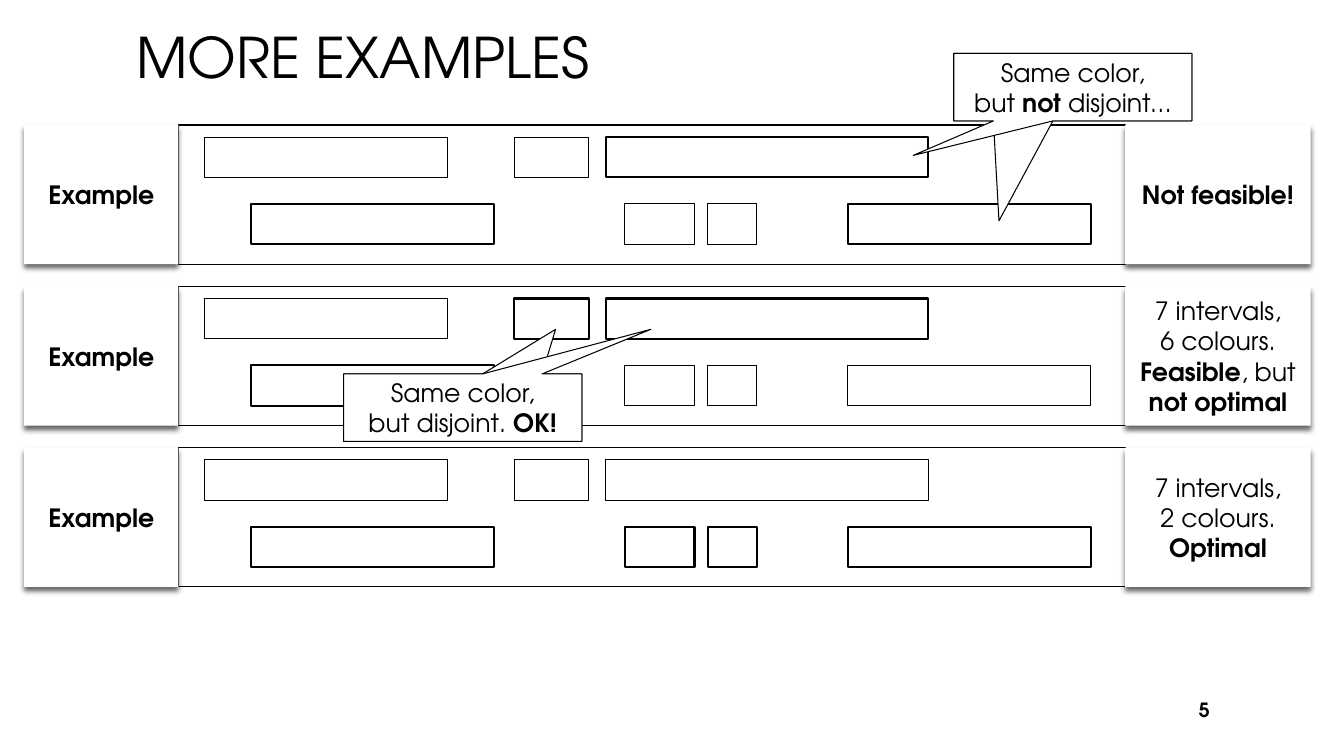
from lxml import etree
from pptx import Presentation
from pptx import util as u
from pptx.dml.color import RGBColor
from pptx.enum import shapes, text
from pptx.oxml import ns

COLS, ROWS = 80, 45
SHAPE, ALIGN = shapes.MSO_SHAPE, text.PP_ALIGN


def rgb(value):
    """Turn a hex string into a colour."""
    return RGBColor.from_string(value)


class Deck:
    """Hold the style and the current slide, measured in grid cells."""

    font, ink, paper, thin, thick = "TeX Gyre Adventor", "000000", "FFFFFF", 0.75, 1.5

    def __init__(self):
        """Open a deck with one title-only slide."""
        self.prs = Presentation()
        self.prs.slide_width, self.prs.slide_height = u.Inches(13.33), u.Inches(7.5)
        self.slide = self.prs.slides.add_slide(self.prs.slide_layouts[5])

    def box(self, x, y, w, h):
        """Convert columns and rows to slide lengths."""
        cw, rh = self.prs.slide_width / COLS, self.prs.slide_height / ROWS
        return [round(v) for v in (x * cw, y * rh, w * cw, h * rh)]

    def put_text(self, sp, paragraphs, size=18, align=ALIGN.CENTER):
        """Fill a shape with text, where ** toggles bold."""
        tf = sp.text_frame
        tf.word_wrap, tf.vertical_anchor = True, text.MSO_ANCHOR.MIDDLE
        for i, content in enumerate(paragraphs):
            p = tf.add_paragraph() if i else tf.paragraphs[0]
            p.alignment = align
            p.font.name, p.font.size = self.font, u.Pt(size)
            p.font.color.rgb = rgb(self.ink)
            for j, part in enumerate(content.split("**")):
                for k, line in enumerate(part.split("\n")):
                    if k:
                        p.add_line_break()
                    if line:
                        r = p.add_run()
                        r.text = line
                        r.font.bold = j % 2 == 1

    def title(self, content, *cells):
        """Place the slide title."""
        sp = self.slide.shapes.title
        sp.left, sp.top, sp.width, sp.height = self.box(*cells)
        self.put_text(sp, [content], 40, ALIGN.LEFT)

    def shape(self, kind, cells, line=None):
        """Add a filled shape, outlined if a width is given."""
        sp = self.slide.shapes.add_shape(kind, *self.box(*cells))
        sp.shadow.inherit = False
        sp.fill.solid()
        sp.fill.fore_color.rgb = rgb(self.paper)
        if line:
            sp.line.width = u.Pt(line)
            sp.line.color.rgb = rgb(self.ink)
        else:
            sp.line.fill.background()
        return sp

    def card(self, cells, paragraphs):
        """Add a text card with a soft shadow beneath it."""
        sp = self.shape(SHAPE.RECTANGLE, cells)
        effects = sp._element.spPr.find(ns.qn("a:effectLst"))
        shadow = etree.SubElement(effects, ns.qn("a:outerShdw"), blurRad=str(u.Pt(4)),
                                  dist=str(u.Pt(3)), dir="5400000", rotWithShape="0")
        color = etree.SubElement(shadow, ns.qn("a:srgbClr"), val=self.ink)
        etree.SubElement(color, ns.qn("a:alpha"), val="60000")
        self.put_text(sp, paragraphs)

    def callout(self, cells, tips, content):
        """Add one box with several tails, its text on the front one."""
        for tip in tips:
            sp = self.shape(SHAPE.RECTANGULAR_CALLOUT, cells, self.thin)
            sp.adjustments[0], sp.adjustments[1] = tip
        self.put_text(sp, [content])

    def label(self, content, size, *cells):
        """Add a right-aligned text box."""
        sp = self.slide.shapes.add_textbox(*self.box(*cells))
        self.put_text(sp, [content], size, ALIGN.RIGHT)


UPPER, LOWER, BAR_H = 0.72, 4.7, 2.4
INTERVALS = {
    "A": (12.18, UPPER, 14.46),
    "B": (14.94, LOWER, 14.46),
    "C": (30.6, UPPER, 4.44),
    "D": (36.06, UPPER, 19.2),
    "E": (37.2, LOWER, 4.14),
    "F": (42.12, LOWER, 2.94),
    "G": (50.46, LOWER, 14.46),
}
EXAMPLES = [
    ("ACEF", ["**Not feasible!**"]),
    ("AEFG", ["7 intervals,\n6 colours.", "**Feasible**, but\n**not optimal**"]),
    ("ACD", ["7 intervals,\n2 colours.", "**Optimal**"]),
]
TOP, PITCH, BAND_H = 7.44, 9.61, 8.28


def main():
    """Build the slide and save it."""
    deck = Deck()
    deck.title("MORE EXAMPLES", 7.5, 0, 65, 6.72)
    for i, (light, verdict) in enumerate(EXAMPLES):
        y = TOP + i * PITCH
        deck.shape(SHAPE.RECTANGLE, (10.62, y, 56.4, BAND_H), deck.thin)
        for name, (x, dy, w) in INTERVALS.items():
            deck.shape(SHAPE.FLOWCHART_PROCESS, (x, y + dy, w, BAR_H),
                       deck.thin if name in light else deck.thick)
        deck.card((1.44, y, 9.18, BAND_H), ["**Example**"])
        deck.card((66.98, y, 11.04, BAND_H), verdict)
    deck.callout((56.77, 3.18, 14.17, 4.02), [(-0.31, 1.98), (-0.67, 1.01)],
                 "Same color,\nbut **not **disjoint…")
    deck.callout((20.46, 22.26, 14.17, 4.02), [(0.39, -1.16), (0.79, -1.16)],
                 "Same color,\nbut disjoint. **OK!**")
    deck.label("**5**", 14, 69, 41.04, 3.6, 2.4)
    deck.prs.save("out.pptx")


if __name__ == "__main__":
    main()
